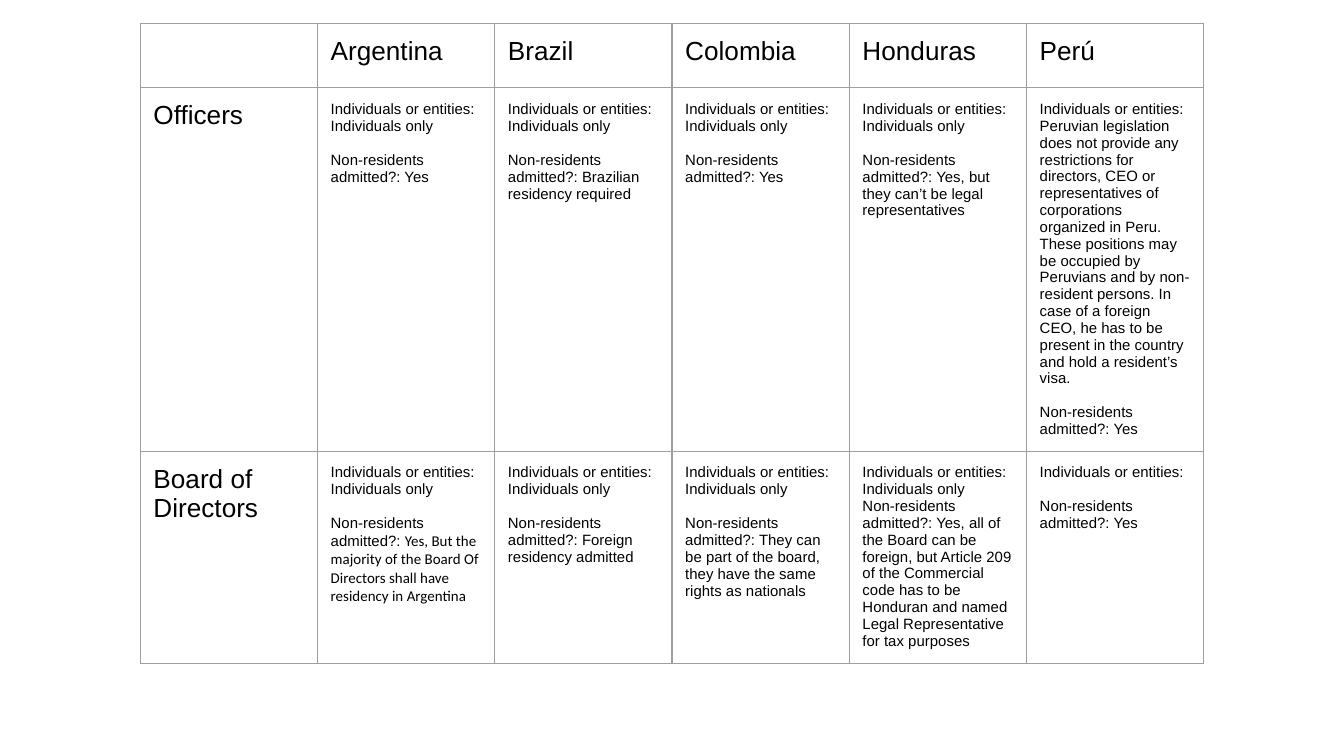
from dataclasses import dataclass

from lxml import etree
from pptx import Presentation
from pptx.dml.color import RGBColor
from pptx.oxml.ns import qn
from pptx.util import Cm, Pt

COLORS = {"text": "000000", "border": "9E9E9E"}
FONT = "Arial"
HEADING_SIZE = 14
BODY_SIZE = 8
INSET = Cm(0.25)
BLANK_LAYOUT = 6
ONLY = "Individuals only"


@dataclass
class Rule:
    """Who may hold a post in one country."""
    entities: str
    residents: str
    gap: float = 9.2
    font: str = FONT


COUNTRIES = ["Argentina", "Brazil", "Colombia", "Honduras", "Perú"]
POSTS = {
    "Officers": [
        Rule(ONLY, "Yes"),
        Rule(ONLY, "Brazilian residency required"),
        Rule(ONLY, "Yes"),
        Rule(ONLY, "Yes, but they can’t be legal representatives"),
        Rule("Peruvian legislation does not provide any restrictions for "
             "directors, CEO or representatives of corporations organized in "
             "Peru. These positions may be occupied by Peruvians and by "
             "non-resident persons. In case of a foreign CEO, he has to be "
             "present in the country and hold a resident’s visa.", "Yes"),
    ],
    "Board of Directors": [
        Rule(ONLY, "Yes, But the majority of the Board Of Directors shall "
             "have residency in Argentina", font="Calibri"),
        Rule(ONLY, "Foreign residency admitted"),
        Rule(ONLY, "They can be part of the board, they have the same rights "
             "as nationals"),
        Rule(ONLY, "Yes, all of the Board can be foreign, but Article 209 of "
             "the Commercial code has to be Honduran and named Legal "
             "Representative for tax purposes", gap=0),
        Rule("", "Yes"),
    ],
}


def add_run(p, text, size, font=FONT):
    """Add one formatted run to a paragraph."""
    r = p.add_run()
    r.text = text
    r.font.size = Pt(size)
    r.font.name = font
    r.font.color.rgb = RGBColor.from_string(COLORS["text"])


def format_cell(cell):
    """Give a cell even insets, no fill and thin grey borders."""
    cell.margin_left = cell.margin_right = INSET
    cell.margin_top = cell.margin_bottom = INSET
    tcPr = cell._tc.get_or_add_tcPr()
    for side in ("a:lnL", "a:lnR", "a:lnT", "a:lnB"):
        ln = etree.SubElement(tcPr, qn(side), w=str(Pt(0.75)))
        fill = etree.SubElement(ln, qn("a:solidFill"))
        etree.SubElement(fill, qn("a:srgbClr"), val=COLORS["border"])
    cell.fill.background()


def write_rule(tf, rule):
    """Write the two statements of a rule into a cell."""
    p = tf.paragraphs[0]
    add_run(p, f"Individuals or entities: {rule.entities}".strip(), BODY_SIZE)
    p = tf.add_paragraph()
    p.space_before = Pt(rule.gap)
    add_run(p, "Non-residents admitted?: ", BODY_SIZE)
    add_run(p, rule.residents, BODY_SIZE, rule.font)


def add_rules_table(s, left, top, width, heights):
    """Place the table of posts by country in the given box."""
    columns = len(COUNTRIES) + 1
    frame = s.shapes.add_table(len(heights), columns, left, top, width,
                               sum(heights))
    table = frame.table
    table.first_row = table.horz_banding = False
    for row, height in zip(table.rows, heights):
        row.height = height
    for cell in table.iter_cells():
        format_cell(cell)

    corner = table.cell(0, 0).text_frame.paragraphs[0]
    corner._p.get_or_add_endParaRPr().set("sz", str(HEADING_SIZE * 100))
    for col, country in enumerate(COUNTRIES, 1):
        p = table.cell(0, col).text_frame.paragraphs[0]
        add_run(p, country, HEADING_SIZE)
    for row, (post, rules) in enumerate(POSTS.items(), 1):
        p = table.cell(row, 0).text_frame.paragraphs[0]
        add_run(p, post, HEADING_SIZE)
        for col, rule in enumerate(rules, 1):
            write_rule(table.cell(row, col).text_frame, rule)


def main():
    """Build and save the slide."""
    prs = Presentation()
    prs.slide_width, prs.slide_height = Cm(25.4), Cm(14.29)
    s = prs.slides.add_slide(prs.slide_layouts[BLANK_LAYOUT])
    add_rules_table(s, Cm(2.65), Cm(0.45), Cm(20.1),
                    [Cm(1.21), Cm(6.86), Cm(4.01)])
    prs.save("out.pptx")


if __name__ == "__main__":
    main()
